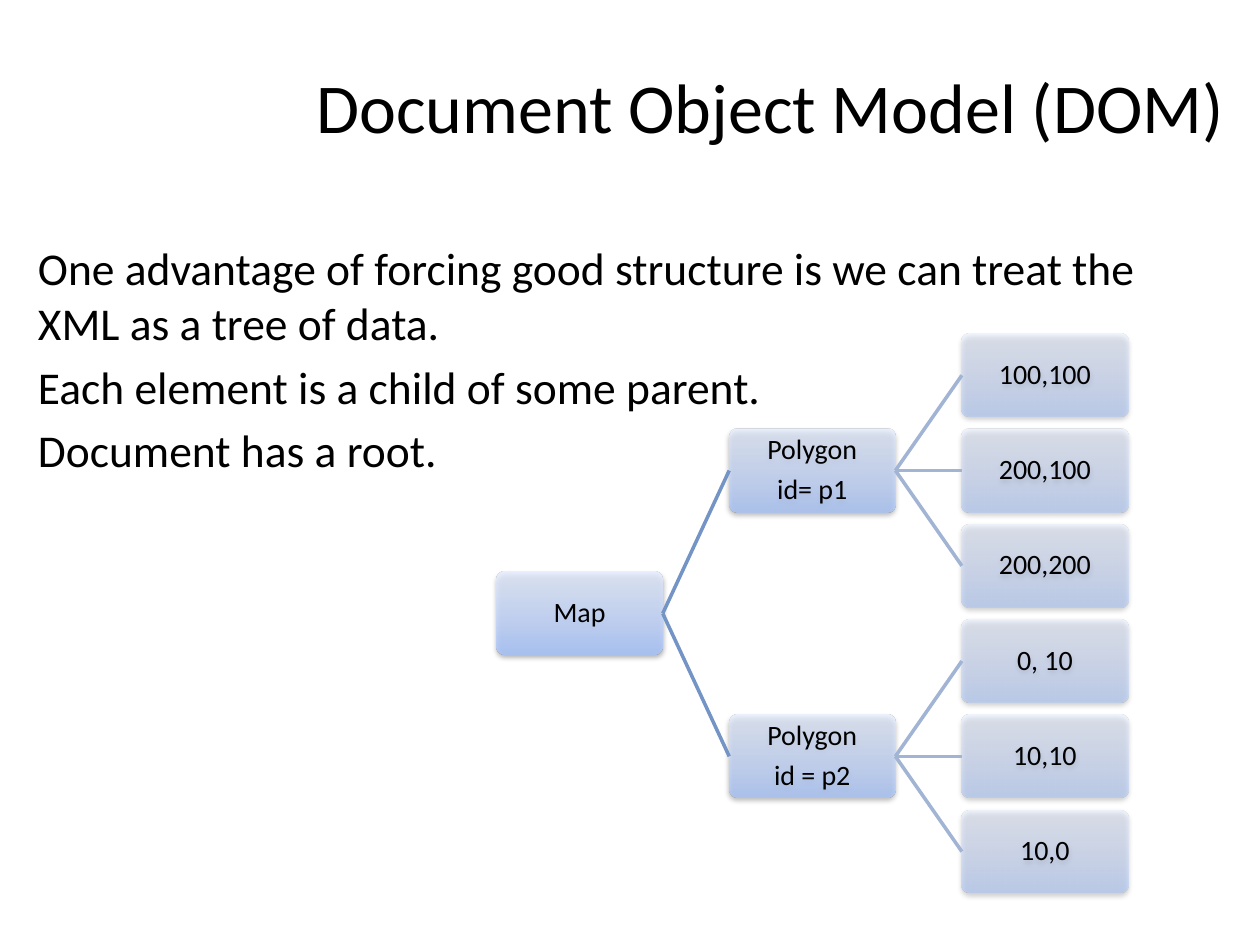
from lxml.etree import SubElement
from pptx import Presentation
from pptx.dml.color import RGBColor
from pptx.enum.shapes import MSO_CONNECTOR as Connector, MSO_SHAPE as Shape
from pptx.enum.text import MSO_ANCHOR as Anchor, PP_ALIGN as Align
from pptx.oxml import parse_xml
from pptx.oxml.ns import nsdecls, qn
from pptx.util import Cm, Pt

COLORS = {
    "text": "000000",
    "bottom": "A4C4FF",
    "middle": "BFD4FF",
    "top": "E6EEFF",
    "root_line": "7394C5",
    "leaf_line": "A1B4D4",
}
FONT = {"name": "Calibri", "bold": False}
NODE_FRAME = {
    "word_wrap": True,
    "vertical_anchor": Anchor.MIDDLE,
    "margin_left": Cm(0.03),
    "margin_right": Cm(0.03),
    "margin_top": Cm(0.03),
    "margin_bottom": Cm(0.03),
}
NODE_WIDTH, NODE_HEIGHT = 3.35, 1.67
COLUMN_STEP, ROW_STEP = 1.4 * NODE_WIDTH, 1.15 * NODE_HEIGHT
OPACITY = [80, 70, 50]
BRANCHES = [
    (["Polygon", "id= p1"], ["100,100", "200,100", "200,200"]),
    (["Polygon", "id = p2"], ["0, 10", "10,10", "10,0"]),
]
BODY = [
    "One advantage of forcing good structure is we can treat the XML as a tree of data.",
    "Each element is a child of some parent.",
    "Document has a root.",
]


def apply(target, values):
    for name, value in values.items():
        setattr(target, name, value)


def place(shape, box):
    apply(shape, dict(zip(("left", "top", "width", "height"), map(Cm, box))))


def write(frame, lines, size, align):
    frame.text = "\n".join(lines)
    for paragraph in frame.paragraphs:
        paragraph.alignment = align
        for run in paragraph.runs:
            apply(run.font, {**FONT, "size": Pt(size)})
            run.font.color.rgb = RGBColor.from_string(COLORS["text"])


def add_title(slide, box):
    title = slide.shapes.title
    place(title, box)
    title.text_frame.vertical_anchor = Anchor.MIDDLE
    write(title.text_frame, ["Document Object Model (DOM)"], 40, Align.RIGHT)


def add_body(slide, box):
    body = slide.placeholders[1]
    place(body, box)
    write(body.text_frame, BODY, 26, Align.LEFT)
    for paragraph in body.text_frame.paragraphs:
        properties = paragraph._p.get_or_add_pPr()
        properties.set("marL", "0")
        properties.set("indent", "0")
        SubElement(properties, qn("a:buNone"))


def style_node(node, opacity):
    stops = "".join(
        f'<a:gs pos="{position}000"><a:srgbClr val="{COLORS[name]}">'
        f'<a:alpha val="{opacity}000"/></a:srgbClr></a:gs>'
        for position, name in [(0, "bottom"), (35, "middle"), (100, "top")]
    )
    gradient = parse_xml(
        f'<a:gradFill {nsdecls("a")} rotWithShape="1"><a:gsLst>{stops}</a:gsLst>'
        '<a:lin ang="16200000" scaled="1"/></a:gradFill>'
    )
    shadow = parse_xml(
        f'<a:effectLst {nsdecls("a")}><a:outerShdw blurRad="{Pt(3.1)}" dist="{Pt(1.6)}" '
        'dir="5400000" rotWithShape="0"><a:srgbClr val="000000">'
        '<a:alpha val="38000"/></a:srgbClr></a:outerShdw></a:effectLst>'
    )
    node.line.fill.background()
    properties = node._element.spPr
    properties.find(qn("a:prstGeom")).addnext(gradient)
    properties.append(shadow)


def add_node(slide, origin, column, row, lines):
    left, top = origin[0] + column * COLUMN_STEP, origin[1] + row * ROW_STEP
    box = map(Cm, (left, top, NODE_WIDTH, NODE_HEIGHT))
    node = slide.shapes.add_shape(Shape.ROUNDED_RECTANGLE, *box)
    node.adjustments[0] = 0.1
    style_node(node, OPACITY[column])
    frame = node.text_frame
    apply(frame, NODE_FRAME)
    write(frame, lines, 16, Align.CENTER)
    for paragraph in frame.paragraphs:
        paragraph.line_spacing = 0.9
    for paragraph in frame.paragraphs[:-1]:
        paragraph.space_after = Pt(5.6)
    return node


def add_link(slide, parent, child, color):
    link = slide.shapes.add_connector(Connector.STRAIGHT, 0, 0, 0, 0)
    link.begin_connect(parent, 3)
    link.end_connect(child, 1)
    link.line.width = Pt(2)
    link.line.color.rgb = RGBColor.from_string(COLORS[color])
    SubElement(link._element.spPr, qn("a:effectLst"))


def add_tree(slide, origin):
    leaf_count = sum(len(leaves) for _, leaves in BRANCHES)
    root = add_node(slide, origin, 0, (leaf_count - 1) / 2, ["Map"])
    row = 0
    for label, leaves in BRANCHES:
        branch = add_node(slide, origin, 1, row + (len(leaves) - 1) / 2, label)
        add_link(slide, root, branch, "root_line")
        for leaf_label in leaves:
            leaf = add_node(slide, origin, 2, row, [leaf_label])
            add_link(slide, branch, leaf, "leaf_line")
            row += 1


def main():
    presentation = Presentation()
    presentation.slide_width, presentation.slide_height = Cm(25.4), Cm(19.05)
    slide = presentation.slides.add_slide(presentation.slide_layouts[1])
    add_title(slide, (2.64, 0.53, 22.28, 3.18))
    add_body(slide, (0.51, 4.72, 22.86, 12.57))
    add_tree(slide, (10.01, 6.73))
    presentation.save("out.pptx")


if __name__ == "__main__":
    main()
